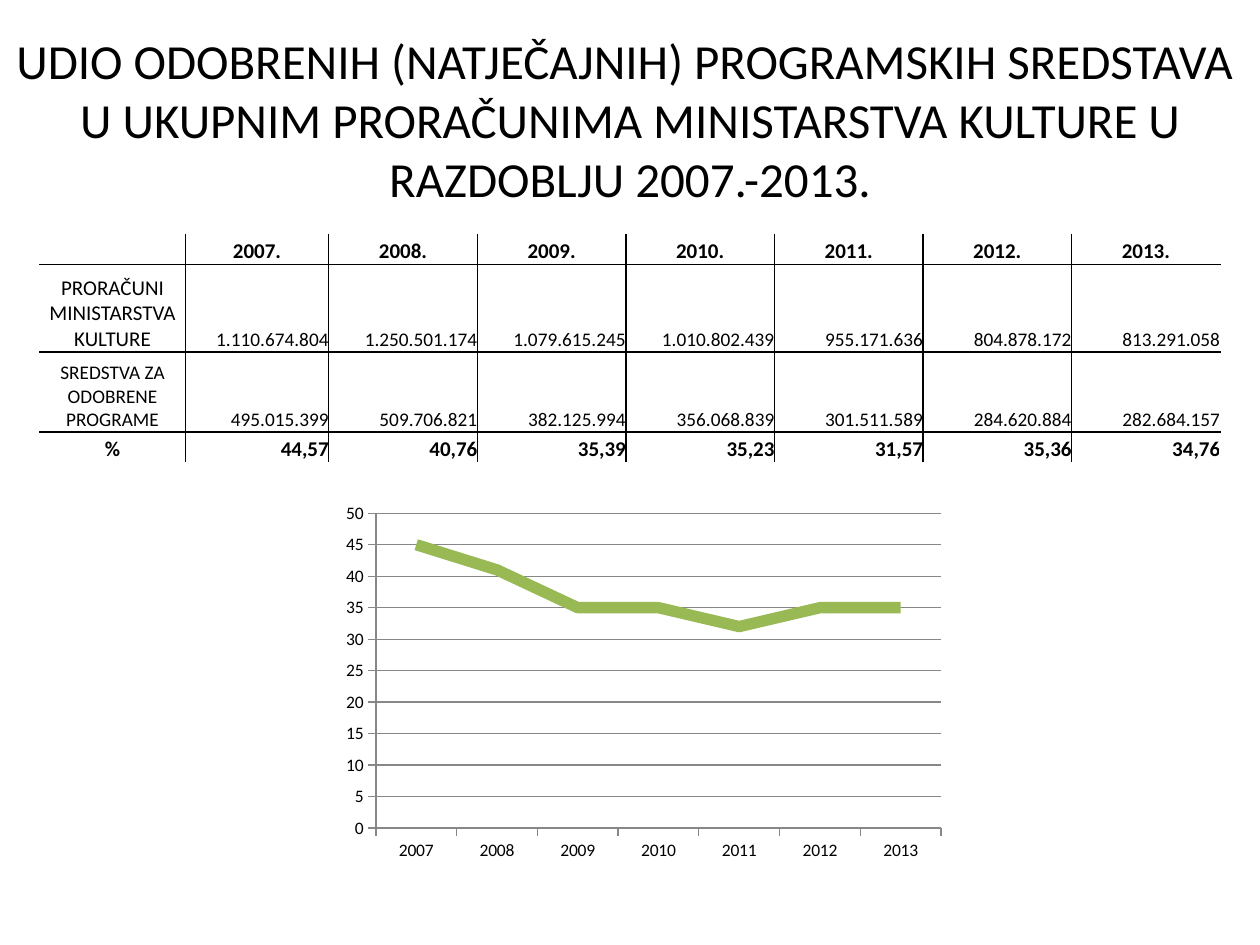
import lxml.etree
import pptx
import pptx.chart.data
import pptx.dml.color
import pptx.enum.chart
import pptx.enum.text
import pptx.oxml
import pptx.oxml.ns
import pptx.util

Pt = pptx.util.Pt
qn = pptx.oxml.ns.qn
Align = pptx.enum.text.PP_ALIGN
FONT = "Calibri"
BLACK, GREEN, GREY = "000000", "98B954", "878787"

TITLE = [
    "UDIO ODOBRENIH (NATJEČAJNIH) PROGRAMSKIH SREDSTAVA ",
    "U UKUPNIM PRORAČUNIMA MINISTARSTVA KULTURE U RAZDOBLJU 2007.-2013.",
]
YEARS = ["2007", "2008", "2009", "2010", "2011", "2012", "2013"]
TREND = [45, 41, 35, 35, 32, 35, 35]
SHARES = ["44,57", "40,76", "35,39", "35,23", "31,57", "35,36", "34,76"]
BUDGETS = ["1.110.674.804", "1.250.501.174", "1.079.615.245", "1.010.802.439",
           "955.171.636", "804.878.172", "813.291.058"]
GRANTS = ["495.015.399", "509.706.821", "382.125.994", "356.068.839",
          "301.511.589", "284.620.884", "282.684.157"]
ROWS = [
    ("", [year + "." for year in YEARS], 12, 12, True, 17.3),
    ("PRORAČUNI MINISTARSTVA KULTURE", BUDGETS, 12, 11, False, 49.9),
    ("SREDSTVA ZA ODOBRENE PROGRAME", GRANTS, 11, 11, False, 45.8),
    ("%", SHARES, 12, 12, True, 17.3),
]
WIDTHS = [83.1, 82] + [84.9] * 6
CHART = (190, 287.3, 360, 216)
PLOT = (24.8, 6, 323, 180)


def color(text):
    return pptx.dml.color.RGBColor.from_string(text)


def style(font, size, bold=False):
    font.name = FONT
    font.size = Pt(size)
    font.bold = bold
    font.color.rgb = color(BLACK)


def add_line(cell, tag):
    props = cell._tc.get_or_add_tcPr()
    line = lxml.etree.SubElement(props, qn("a:" + tag), w=str(Pt(1)))
    fill = lxml.etree.SubElement(line, qn("a:solidFill"))
    lxml.etree.SubElement(fill, qn("a:srgbClr"), val=BLACK)


def add_title(slide):
    box = slide.shapes.add_textbox(Pt(0), Pt(13.9), Pt(720), Pt(108.7))
    frame = box.text_frame
    frame.word_wrap = True
    frame.text = "\n".join(TITLE)
    for para in frame.paragraphs:
        para.alignment = Align.CENTER
        style(para.runs[0].font, 28)


def fill_cell(cell, text, size, bold, align):
    cell.margin_left = cell.margin_right = Pt(0)
    cell.margin_top = cell.margin_bottom = Pt(0)
    cell.vertical_anchor = pptx.enum.text.MSO_ANCHOR.BOTTOM
    cell.text = text
    para = cell.text_frame.paragraphs[0]
    para.alignment = align
    for run in para.runs:
        style(run.font, size, bold)
    if not text:
        lxml.etree.SubElement(para._p, qn("a:endParaRPr"), sz=str(size * 100))


def add_table(slide):
    total = sum(row[-1] for row in ROWS)
    frame = slide.shapes.add_table(len(ROWS), len(WIDTHS), Pt(22.8), Pt(133.9),
                                   Pt(sum(WIDTHS)), Pt(total))
    table = frame.table
    table.first_row = table.horz_banding = False
    for col, width in zip(table.columns, WIDTHS):
        col.width = Pt(width)
    for r, (label, values, head, size, bold, height) in enumerate(ROWS):
        table.rows[r].height = Pt(height)
        for c, text in enumerate([label] + values):
            cell = table.cell(r, c)
            align = Align.CENTER if r == 0 or c == 0 else Align.RIGHT
            fill_cell(cell, text, size if c else head, bold, align)
            sides = {"lnL": c > 0, "lnR": c < len(WIDTHS) - 1,
                     "lnT": r > 0, "lnB": r < len(ROWS) - 1}
            for tag, shown in sides.items():
                if shown:
                    add_line(cell, tag)
            cell.fill.background()


def set_plot(chart):
    area = chart._chartSpace.chart.plotArea
    for old in area.findall(qn("c:layout")):
        area.remove(old)
    layout = pptx.oxml.parse_xml(
        '<c:layout xmlns:c="http://schemas.openxmlformats.org/drawingml/2006/chart"/>')
    area.insert(0, layout)
    manual = lxml.etree.SubElement(layout, qn("c:manualLayout"))
    marks = {"layoutTarget": "inner", "xMode": "edge", "yMode": "edge"}
    for tag, part, whole in zip("xywh", PLOT, CHART[2:] * 2):
        marks[tag] = part / whole
    for tag, value in marks.items():
        lxml.etree.SubElement(manual, qn("c:" + tag), val=str(value))


def add_chart(slide):
    data = pptx.chart.data.CategoryChartData()
    data.categories = YEARS
    data.add_series("Series 1", TREND)
    kind = pptx.enum.chart.XL_CHART_TYPE.LINE
    chart = slide.shapes.add_chart(kind, *map(Pt, CHART), data).chart
    chart.has_legend = chart.has_title = False
    style(chart.font, 10)
    chart.plots[0].vary_by_categories = False
    series = chart.plots[0].series[0]
    series.smooth = False
    series.marker.style = pptx.enum.chart.XL_MARKER_STYLE.NONE
    series.format.line.width = Pt(6.5)
    series.format.line.color.rgb = color(GREEN)
    scale = chart.value_axis
    scale.minimum_scale, scale.maximum_scale, scale.major_unit = 0, 50, 5
    scale.has_major_gridlines = True
    scale.tick_labels.number_format = "0"
    scale.tick_labels.number_format_is_linked = False
    for part in (scale, chart.category_axis, scale.major_gridlines):
        part.format.line.color.rgb = color(GREY)
        part.format.line.width = Pt(0.75)
    for axis in (scale, chart.category_axis):
        axis.major_tick_mark = pptx.enum.chart.XL_TICK_MARK.OUTSIDE
    set_plot(chart)


def main():
    deck = pptx.Presentation()
    deck.slide_width, deck.slide_height = Pt(720), Pt(540)
    slide = deck.slides.add_slide(deck.slide_layouts[6])
    add_title(slide)
    add_chart(slide)
    add_table(slide)
    deck.save("out.pptx")


if __name__ == "__main__":
    main()
